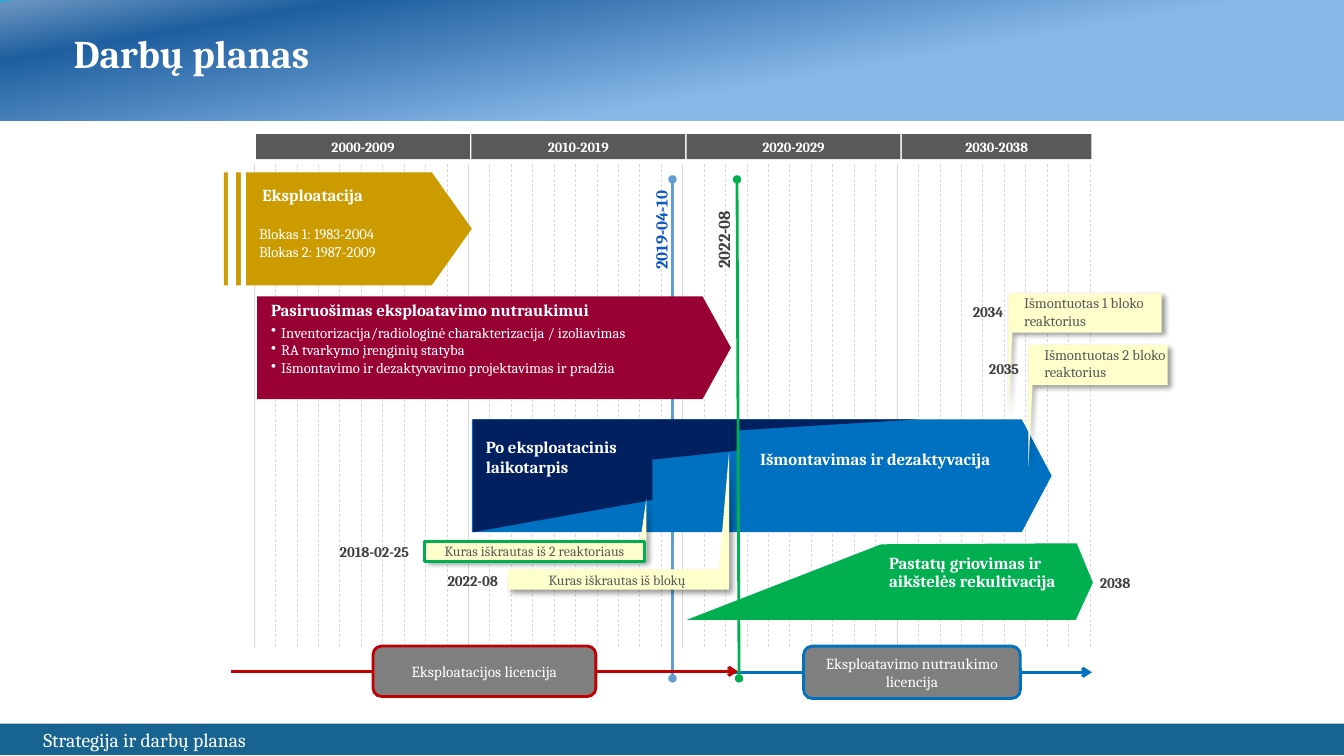
from lxml import etree
from pptx import Presentation
from pptx import util as u
from pptx.dml import color
from pptx.enum import dml, shapes, text
from pptx.oxml import ns, parse_xml

THEME = {
    "font": "Cambria",
    "white": "FFFFFF", "grey": "595959", "dark": "404040", "box": "7F7F7F",
    "grid": "D9D9D9", "gold": "CC9B00", "wine": "990033", "navy": "002060",
    "blue": "0070C0", "green": "00B050", "red": "C00000", "note": "FFFFCC",
    "today": "629DD1", "today_text": "0E58C4", "footer": "176490",
    "title": 28, "foot": 14, "heading": 12, "licence": 11, "body": 10.5, "small": 10,
}
HEADER_STOPS = [(38, "88B8E8"), (83, "1F5FA0"), (99, "6994BF"), (100, "1EB4DD")]

TITLE = "Darbų planas"
FOOTER = "Strategija ir darbų planas"
PERIODS = [("2000-2009", 2.12), ("2010-2019", 2.12), ("2020-2029", 2.12), ("2030-2038", 1.88)]
PHASES = [
    ((4.68, 4.16, 5.75, 1.12), 0.265, "blue"),
    ((2.22, 1.71, 2.46, 1.12), 0.355, "gold"),
    ((2.55, 2.94, 4.7, 1.02), 0.276, "wine"),
]
STRIPES = [(2.26, 1.59, 0.08, 1.32), (2.39, 1.59, 0.05, 1.32)]
OUTLINES = [
    ("navy", [(4.69, 5.28), (6.47, 4.96), (6.47, 4.56), (7.32, 4.47), (7.32, 4.27),
              (9.11, 4.16), (4.69, 4.16)]),
    ("green", [(8.74, 5.4), (10.68, 5.39), (10.84, 5.78), (10.67, 6.15), (6.81, 6.15)]),
]
CALLOUTS = [
    [(7.23, 4.49), (7.23, 5.85), (5.04, 5.85), (5.04, 5.65), (7.13, 5.65)],
    [(6.41, 4.95), (6.41, 5.57), (4.22, 5.57), (4.22, 5.37), (6.35, 5.37)],
    [(10, 4.12), (10, 2.91), (11.52, 2.91), (11.52, 3.3), (10.04, 3.3)],
    [(10.2, 4.63), (10.2, 3.42), (11.58, 3.42), (11.58, 3.82), (10.24, 3.82)],
]
FUEL_NOTES = [
    ((5.03, 5.65, 2.18, 0.2), "Kuras iškrautas iš blokų", None),
    ((4.21, 5.37, 2.18, 0.2), "Kuras iškrautas iš 2 reaktoriaus", "green"),
]
PHASE_TITLES = [
    ((4.72, 4.28, 1.98, 0.5), "Po eksploatacinis laikotarpis", {}),
    ((2.1, 1.78, 1.6, 0.3), "Eksploatacija", {"align": "RIGHT"}),
    ((8.72, 5.46, 2, 0.46), "Pastatų griovimas ir aikštelės rekultivacija", {"spacing": 0.9}),
    ((7.44, 4.4, 3.46, 0.3), "Išmontavimas ir dezaktyvacija", {}),
]
UNITS = ["Blokas 1: 1983-2004", "Blokas 2: 1987-2009"]
PREPARATION = "Pasiruošimas eksploatavimo nutraukimui"
PREPARATION_POINTS = [
    "Inventorizacija/radiologinė charakterizacija / izoliavimas",
    "RA tvarkymo įrenginių statyba",
    "Išmontavimo ir dezaktyvavimo projektavimas ir pradžia",
]
REACTOR_NOTES = [
    ((10.06, 2.87, 1.51, 0.45), "Išmontuotas 1 bloko reaktorius"),
    ((10.26, 3.38, 1.46, 0.45), "Išmontuotas 2 bloko reaktorius"),
]
LICENCES = [
    ((7.25, 10.83, 6.67), (7.97, 6.41, 2.15, 0.52), "Eksploatavimo nutraukimo licencija", "blue"),
    ((2.29, 7.32, 6.66), (3.7, 6.41, 2.21, 0.5), "Eksploatacijos licencija", "red"),
]
MILESTONES = [
    ((5.95, 2.02, 1.21, 0.3), "2019-04-10", "today_text"),
    ((6.57, 2.01, 1.21, 0.3), "2022-08", "dark"),
]
DATES = [
    ((3.27, 5.34, 1.61, 0.28), "2018-02-25"),
    ((9.55, 2.96, 1.61, 0.28), "2034"),
    ((9.71, 3.52, 0.6, 0.28), "2035"),
    ((10.81, 5.64, 0.63, 0.28), "2038"),
    ((4.34, 5.62, 0.88, 0.28), "2022-08"),
]

presentation = Presentation()
presentation.slide_width, presentation.slide_height = u.Inches(13.33), u.Inches(7.5)
slide = presentation.slides.add_slide(presentation.slide_layouts[6])


def rgb(name):
    return color.RGBColor.from_string(THEME[name])


def paint(shape, fill=None, line=None):
    shape.shadow.inherit = False
    if fill:
        shape.fill.solid()
        shape.fill.fore_color.rgb = rgb(fill)
    else:
        shape.fill.background()
    if line:
        shape.line.color.rgb = rgb(line)
        shape.line.width = u.Pt(2)
    else:
        shape.line.fill.background()
    return shape


def add_block(box, fill=None, line=None, kind="RECTANGLE"):
    preset = getattr(shapes.MSO_SHAPE, kind)
    return paint(slide.shapes.add_shape(preset, *map(u.Inches, box)), fill, line)


def add_outline(points, fill):
    corners = [(u.Inches(x), u.Inches(y)) for x, y in points]
    builder = slide.shapes.build_freeform(*corners[0], scale=1.0)
    builder.add_line_segments(corners[1:], close=True)
    return paint(builder.convert_to_shape(), fill)


def add_line(start, end, stroke, width, head=None, tail=None, dashed=False):
    line = slide.shapes.add_connector(shapes.MSO_CONNECTOR.STRAIGHT, *map(u.Inches, start + end))
    line.line.color.rgb = rgb(stroke)
    line.line.width = u.Pt(width)
    if dashed:
        line.line.dash_style = dml.MSO_LINE.DASH
    properties = line.line._get_or_add_ln()
    for tag, marker in (("a:headEnd", head), ("a:tailEnd", tail)):
        if marker:
            etree.SubElement(properties, ns.qn(tag), type=marker)
    etree.SubElement(line._element.spPr, ns.qn("a:effectLst"))


def write(shape, lines, size, ink="white", bold=False, align="LEFT", anchor="TOP",
          margins=(0.1, 0.05), spacing=None):
    frame = shape.text_frame
    frame.word_wrap = True
    frame.vertical_anchor = getattr(text.MSO_ANCHOR, anchor)
    frame.margin_left = frame.margin_right = u.Inches(margins[0])
    frame.margin_top = frame.margin_bottom = u.Inches(margins[1])
    for index, line in enumerate(lines):
        paragraph = frame.add_paragraph() if index else frame.paragraphs[0]
        paragraph.alignment = getattr(text.PP_ALIGN, align)
        if spacing:
            paragraph.line_spacing = spacing
        add_run(paragraph, line, size, ink, bold)
    return frame


def add_run(paragraph, words, size, ink="white", bold=False):
    run = paragraph.add_run()
    run.text = words
    run.font.name = THEME["font"]
    run.font.size = u.Pt(THEME[size])
    run.font.bold = bold
    run.font.color.rgb = rgb(ink)


def add_label(box, lines, size, rotation=0, **style):
    label = slide.shapes.add_textbox(*map(u.Inches, box))
    label.rotation = rotation
    return write(label, lines, size, **style)


header = add_block((0, 0, 13.33, 1.2))
stops = "".join(f'<a:gs pos="{place * 1000}"><a:srgbClr val="{tone}"/></a:gs>'
                for place, tone in HEADER_STOPS)
gradient = parse_xml(f'<a:gradFill {ns.nsdecls("a")} rotWithShape="1"><a:gsLst>{stops}</a:gsLst>'
                     '<a:lin ang="15600000" scaled="0"/></a:gradFill>')
header_properties = header._element.spPr
header_properties.replace(header_properties.find(ns.qn("a:noFill")), gradient)
add_label((0.68, 0.28, 10.58, 0.54), [TITLE], "title", bold=True, anchor="MIDDLE",
          margins=(0.05, 0.05), spacing=0.9)

add_line((6.67, 1.78), (6.67, 6.73), "today", 2, "oval", "oval")
for year in range(40):
    x = 2.52 + year * 8.29 / 39
    add_line((x, 1.63), (x, 6.43), "grid", 0.5, dashed=year % 10 != 0)

for index, (period, width) in enumerate(PERIODS):
    bar = add_block((2.54 + index * 2.135, 1.33, width, 0.25), "grey")
    write(bar, [period], "small", bold=True, align="CENTER", anchor="MIDDLE")

for box, point, fill in PHASES:
    add_block(box, fill, kind="PENTAGON").adjustments[0] = point
for fill, points in OUTLINES:
    add_outline(points, fill)
for box in STRIPES:
    add_block(box, "white")
for box, words, style in PHASE_TITLES:
    add_label(box, [words], "heading", bold=True, **style)
add_label((2.51, 2.17, 1.64, 0.49), UNITS, "body", margins=(0.06, 0.06))

preparation = add_label((2.59, 2.92, 3.92, 0.88), [PREPARATION], "heading", bold=True)
preparation.paragraphs[0].space_after = u.Pt(3)
for point in PREPARATION_POINTS:
    paragraph = preparation.add_paragraph()
    properties = paragraph._p.get_or_add_pPr()
    properties.set("marL", str(u.Inches(0.1)))
    properties.set("indent", str(u.Inches(-0.1)))
    etree.SubElement(properties, ns.qn("a:buChar"), char="•")
    add_run(paragraph, point, "body")

for points in CALLOUTS:
    callout = add_outline(points, "note")
    effects = callout._element.spPr.find(ns.qn("a:effectLst"))
    effects.append(parse_xml(
        f'<a:outerShdw {ns.nsdecls("a")} blurRad="{u.Pt(4)}" dist="{u.Pt(3)}" dir="2700000" '
        'algn="tl" rotWithShape="0"><a:srgbClr val="000000"><a:alpha val="40000"/></a:srgbClr>'
        '</a:outerShdw>'))
for box, words, border in FUEL_NOTES:
    write(add_block(box, line=border), [words], "small", "grey", align="CENTER",
          anchor="MIDDLE", margins=(0.04, 0.04))
for box, words in REACTOR_NOTES:
    add_label(box, [words], "body", ink="grey")

for (left, right, y), box, words, stroke in LICENCES:
    add_line((left, y), (right, y), stroke, 2.25, tail="arrow")
    write(add_block(box, "box", stroke, "ROUNDED_RECTANGLE"), [words], "licence",
          align="CENTER", anchor="MIDDLE", margins=(0.04, 0.05))

footer = add_block((0, 7.18, 13.33, 0.31), "footer")
footer_frame = write(footer, [FOOTER], "foot", anchor="MIDDLE", margins=(0.04, 0.04))
footer_frame.paragraphs[0]._p.get_or_add_pPr().set("indent", str(u.Inches(0.39)))

add_line((7.31, 1.78), (7.33, 6.73), "green", 2, "oval", "oval")
for box, words, ink in MILESTONES:
    add_label(box, [words], "heading", rotation=270, ink=ink, bold=True)
for box, words in DATES:
    add_label(box, [words], "body", ink="dark", bold=True)

presentation.save("out.pptx")
